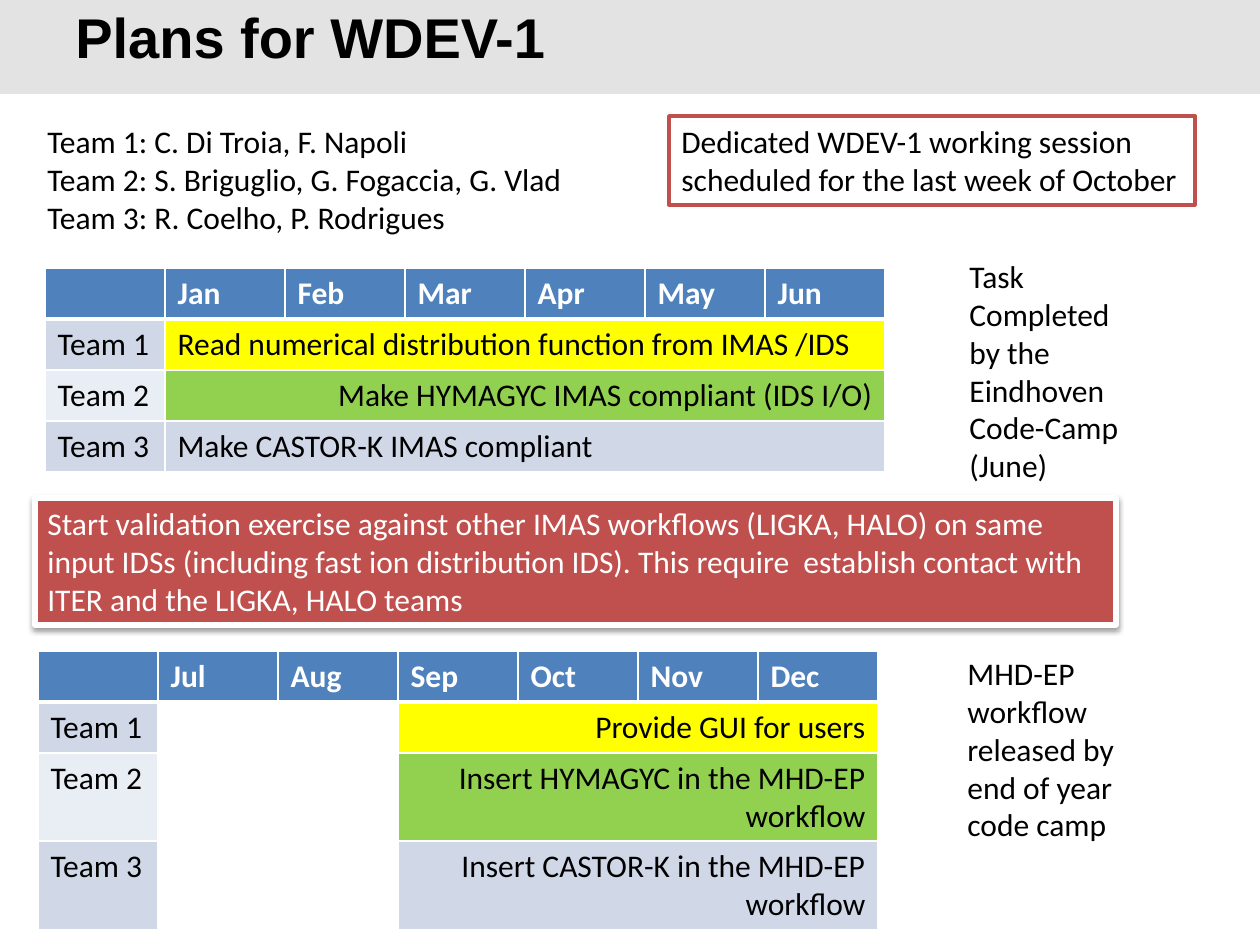
from lxml.etree import SubElement
from pptx import Presentation
from pptx.dml.color import RGBColor
from pptx.enum.shapes import MSO_SHAPE
from pptx.enum.text import MSO_ANCHOR, PP_ALIGN
from pptx.oxml import parse_xml
from pptx.oxml.ns import nsdecls, qn
from pptx.util import Pt

HUES = {"band": "E3E3E3", "ink": "000000", "white": "FFFFFF", "head": "4F81BD",
        "dark": "D0D8E8", "light": "E9EDF4", "yellow": "FFFF00",
        "green": "92D050", "red": "C0504D"}

TITLE = "Plans for WDEV-1"
TEAMS = ["Team 1: C. Di Troia, F. Napoli",
         "Team 2: S. Briguglio, G. Fogaccia, G. Vlad",
         "Team 3: R. Coelho, P. Rodrigues"]
NOTES = [  # place, text
    ((957, 251, 198, 242), "Task Completed by the Eindhoven Code-Camp (June)"),
    ((955, 648, 198, 204), "MHD-EP workflow released by end of year code camp")]
CHECK = ("Start validation exercise against other IMAS workflows (LIGKA, HALO) "
         "on same input IDSs (including fast ion distribution IDS). This require  "
         "establish contact with ITER and the LIGKA, HALO teams")
MEET = "Dedicated WDEV-1 working session scheduled for the last week of October"

# Each task: first month column, text, fill, right aligned
PLANS = [
    {"at": (45, 268), "rows": (51, 51, 51, 51),
     "months": ["Jan", "Feb", "Mar", "Apr", "May", "Jun"],
     "tasks": [
         (1, "Read numerical distribution function from IMAS /IDS", "yellow", False),
         (1, "Make HYMAGYC IMAS compliant (IDS I/O)", "green", True),
         (1, "Make CASTOR-K IMAS compliant", "dark", False)]},
    {"at": (38, 651), "rows": (51, 51, 88, 88),
     "months": ["Jul", "Aug", "Sep", "Oct", "Nov", "Dec"],
     "tasks": [
         (3, "Provide GUI for users", "yellow", True),
         (3, "Insert HYMAGYC in the MHD-EP workflow", "green", True),
         (3, "Insert CASTOR-K in the MHD-EP workflow", "dark", True)]}]
COL = 120
BODY = {"name": "Calibri", "size": Pt(18), "bold": False}
BOLD = BODY | {"bold": True}
HEAD = {"name": "Arial", "size": Pt(32), "bold": True}


def px(n):
    return round(n * 914400 / 126)


def rgb(hue):
    return RGBColor.from_string(HUES[hue])


def paint(item, hue):
    item.fill.solid()
    item.fill.fore_color.rgb = rgb(hue)


def write(frame, lines, hue="ink", form=BODY, align=PP_ALIGN.LEFT):
    frame.word_wrap = True
    for i, line in enumerate(lines):
        para = frame.paragraphs[0] if i == 0 else frame.add_paragraph()
        para.alignment = align
        run = para.add_run()
        run.text = line
        for key, value in form.items():
            setattr(run.font, key, value)
        run.font.color.rgb = rgb(hue)


def label(slide, place, lines, form=BODY):
    box = slide.shapes.add_textbox(*map(px, place))
    write(box.text_frame, lines, form=form)
    return box.text_frame


def panel(slide, place, fill, line=None, width=0):
    box = slide.shapes.add_shape(MSO_SHAPE.RECTANGLE, *map(px, place))
    box.shadow.inherit = False
    paint(box, fill)
    if line:
        box.line.color.rgb = rgb(line)
        box.line.width = Pt(width)
    else:
        box.line.fill.background()
    box.text_frame.vertical_anchor = MSO_ANCHOR.TOP
    return box


def shade(box):
    """Give the box a soft shadow below it."""
    old = box._element.spPr.find(qn("a:effectLst"))
    new = parse_xml(
        f'<a:effectLst {nsdecls("a")}><a:outerShdw blurRad="39370" dist="20320" '
        'dir="5400000" rotWithShape="0"><a:srgbClr val="000000">'
        '<a:alpha val="38000"/></a:srgbClr></a:outerShdw></a:effectLst>')
    old.getparent().replace(old, new)


def edge(cell, base):
    """Draw white cell borders, with the given point width at the bottom."""
    props = cell._tc.get_or_add_tcPr()
    for i, (tag, width) in enumerate(
            [("lnL", 1), ("lnR", 1), ("lnT", 1), ("lnB", base)]):
        line = props.makeelement(qn(f"a:{tag}"), {"w": str(Pt(width))})
        fill = SubElement(line, qn("a:solidFill"))
        SubElement(fill, qn("a:srgbClr"), val=HUES["white"])
        props.insert(i, line)


def plan(slide, data):
    months, tasks, rows = data["months"], data["tasks"], data["rows"]
    wide = len(months) + 1
    size = (wide * COL, sum(rows))
    grid = slide.shapes.add_table(
        len(rows), wide, *map(px, data["at"] + size)).table
    for col in grid.columns:
        col.width = px(COL)
    for row, tall in zip(grid.rows, rows):
        row.height = px(tall)
    for r in range(len(rows)):
        for c in range(wide):
            cell = grid.cell(r, c)
            paint(cell, "white" if r else "head")
            edge(cell, 1 if r else 3)
    for c, month in enumerate(months, 1):
        write(grid.cell(0, c).text_frame, [month], "white", BOLD)
    for r, (start, text, fill, right) in enumerate(tasks, 1):
        team = grid.cell(r, 0)
        paint(team, "dark" if r % 2 else "light")
        write(team.text_frame, [f"Team {r}"])
        task = grid.cell(r, start)
        task.merge(grid.cell(r, wide - 1))
        paint(task, fill)
        write(task.text_frame, [text],
              align=PP_ALIGN.RIGHT if right else PP_ALIGN.LEFT)


def main():
    deck = Presentation()
    deck.slide_width, deck.slide_height = px(1260), px(945)
    slide = deck.slides.add_slide(deck.slide_layouts[6])

    panel(slide, (0, 0, 1260, 94), "band")
    title = label(slide, (63, 10, 1040, 63), [TITLE], HEAD)
    title.vertical_anchor = MSO_ANCHOR.MIDDLE
    title.paragraphs[0].line_spacing = Pt(32)
    label(slide, (35, 116, 586, 127), TEAMS)
    for data in PLANS:
        plan(slide, data)
    for place, text in NOTES:
        label(slide, place, [text])

    check = panel(slide, (35, 498, 1081, 127), "red", "white", 3)
    shade(check)
    write(check.text_frame, [CHECK], "white")
    meet = panel(slide, (669, 116, 526, 89), "white", "red", 2)
    write(meet.text_frame, [MEET])
    deck.save("out.pptx")


if __name__ == "__main__":
    main()
